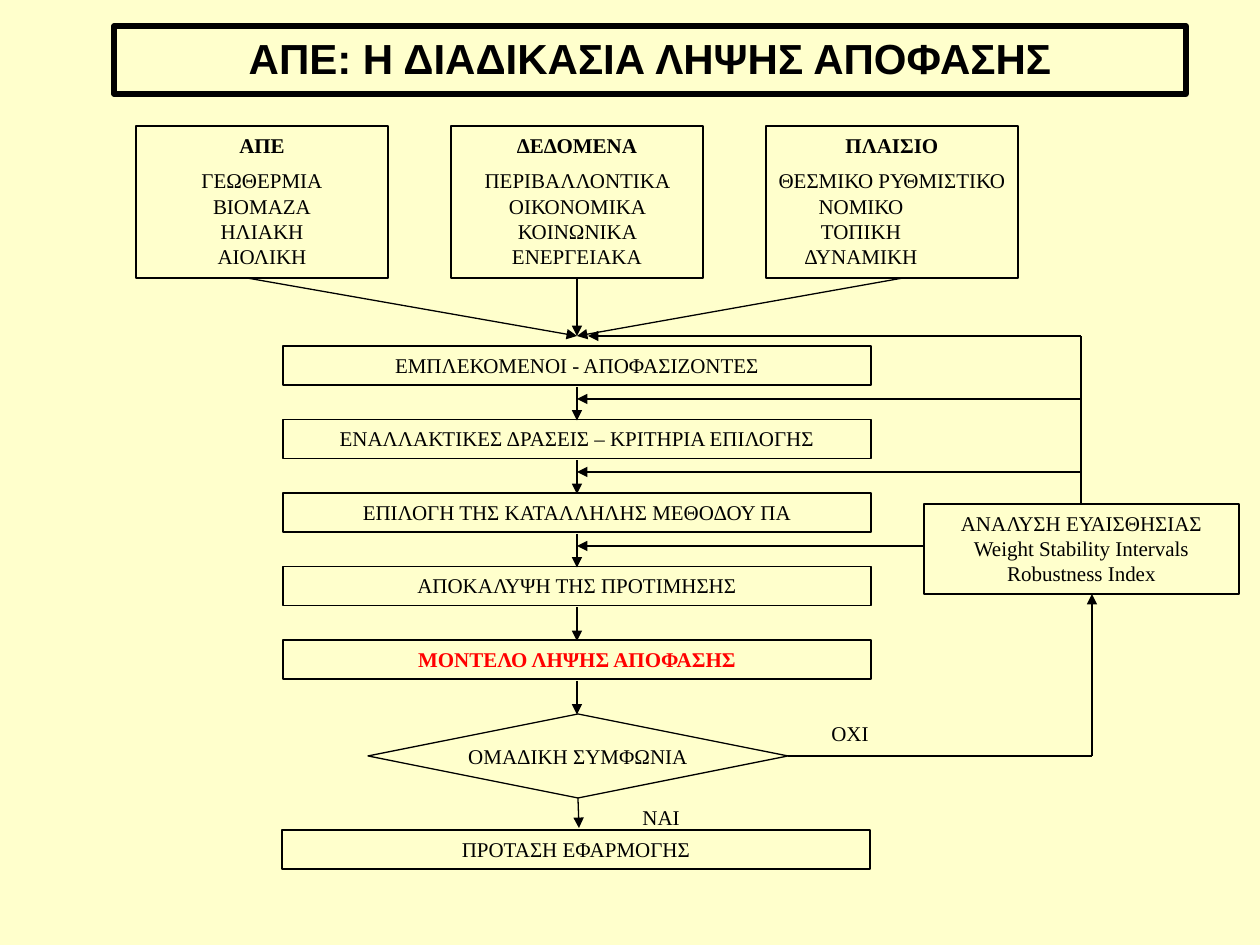
from lxml import etree
from pptx import Presentation
from pptx import util as u
from pptx.dml.color import RGBColor
from pptx.enum import shapes, text
from pptx.oxml import ns

SCALE = u.Inches(1) / 126
INK, RED, PAPER = "000000", "FF0000", "FFFFCC"

SOURCES = [
    ("ΑΠΕ", ["ΓΕΩΘΕΡΜΙΑ", "ΒΙΟΜΑΖΑ", "ΗΛΙΑΚΗ", "ΑΙΟΛΙΚΗ"]),
    ("ΔΕΔΟΜΕΝΑ", ["ΠΕΡΙΒΑΛΛΟΝΤΙΚΑ ΟΙΚΟΝΟΜΙΚΑ ΚΟΙΝΩΝΙΚΑ ΕΝΕΡΓΕΙΑΚΑ"]),
    ("ΠΛΑΙΣΙΟ", ["ΘΕΣΜΙΚΟ ΡΥΘΜΙΣΤΙΚΟ", "ΝΟΜΙΚΟ", "ΤΟΠΙΚΗ ΔΥΝΑΜΙΚΗ"]),
]
STEPS = [
    "ΕΜΠΛΕΚΟΜΕΝΟΙ - ΑΠΟΦΑΣΙΖΟΝΤΕΣ",
    "ΕΝΑΛΛΑΚΤΙΚΕΣ ΔΡΑΣΕΙΣ – ΚΡΙΤΗΡΙΑ ΕΠΙΛΟΓΗΣ",
    "ΕΠΙΛΟΓΗ ΤΗΣ ΚΑΤΑΛΛΗΛΗΣ ΜΕΘΟΔΟΥ ΠΑ",
    "ΑΠΟΚΑΛΥΨΗ ΤΗΣ ΠΡΟΤΙΜΗΣΗΣ",
    "ΜΟΝΤΕΛΟ ΛΗΨΗΣ ΑΠΟΦΑΣΗΣ",
]


def px(*lengths):
    return [u.Emu(round(length * SCALE)) for length in lengths]


def color(value):
    return RGBColor.from_string(value)


def apply(target, values):
    for name, value in values.items():
        setattr(target, name, value)


def write(shape, lines, align=text.PP_ALIGN.CENTER, size=12, **font):
    """Fill the shape with one paragraph per line and return the paragraphs."""
    frame = shape.text_frame
    apply(frame, {"word_wrap": True, "vertical_anchor": text.MSO_ANCHOR.TOP})
    frame.text = "\n".join(lines)
    values = {"name": "Times New Roman", "size": u.Pt(size), "bold": False, **font}
    for paragraph in frame.paragraphs:
        paragraph.alignment = align
        for run in paragraph.runs:
            apply(run.font, values)
            run.font.color.rgb = color(INK)
    return frame.paragraphs


def add_box(slide, box, lines, kind=shapes.MSO_SHAPE.RECTANGLE, width=0.75, **style):
    shape = slide.shapes.add_shape(kind, *px(*box))
    shape.shadow.inherit = False
    shape.fill.background()
    shape.line.color.rgb = color(INK)
    shape.line.width = u.Pt(width)
    write(shape, lines, **style)
    return shape


def add_label(slide, box, label):
    write(slide.shapes.add_textbox(*px(*box)), [label], text.PP_ALIGN.LEFT)


def add_line(slide, start, end, arrow=True):
    line = slide.shapes.add_connector(
        shapes.MSO_CONNECTOR.STRAIGHT, *px(*start, *end))
    line.line.color.rgb = color(INK)
    line.line.width = u.Pt(0.75)
    if arrow:
        etree.SubElement(line.line._get_or_add_ln(), ns.qn("a:tailEnd"), type="triangle")
    etree.SubElement(line._element.spPr, ns.qn("a:effectLst"))


def add_sources(slide, left, top, target):
    """Three input boxes whose arrows meet at the target point."""
    width, height, pitch = 252, 152, 315
    arrow_starts = (247, 577, 903)
    for index, (heading, items) in enumerate(SOURCES):
        shape = add_box(slide, (left + index * pitch, top, width, height),
                        [heading, *items])
        paragraphs = shape.text_frame.paragraphs
        paragraphs[0].runs[0].font.bold = True
        paragraphs[1].space_before = u.Pt(6)
        for paragraph in paragraphs:
            if paragraph.text == "ΝΟΜΙΚΟ":
                paragraph._p.get_or_add_pPr().set("marR", str(px(62)[0]))
        add_line(slide, (arrow_starts[index], top + height), target)


def add_steps(slide, left, top, width, height):
    """Stacked steps, each with an arrow down to the next part."""
    pitch = 73.5
    center = left + width // 2
    for index, label in enumerate(STEPS):
        row = top + index * pitch
        shape = add_box(slide, (left, row, width, height), [label])
        add_line(slide, (center, row + height + 2), (center, row + pitch + 1))
    font = shape.text_frame.paragraphs[0].runs[0].font
    font.bold = True
    font.color.rgb = color(RED)


def add_decision(slide, left, top, width, height):
    """Diamond with its yes and no exits and the final proposal."""
    center, middle, bottom = left + width // 2, top + height // 2, top + height
    right = left + width
    diamond = add_box(slide, (left, top, width, height), ["ΟΜΑΔΙΚΗ ΣΥΜΦΩΝΙΑ"],
                      shapes.MSO_SHAPE.DIAMOND)
    apply(diamond.text_frame, {"word_wrap": False,
                               "vertical_anchor": text.MSO_ANCHOR.MIDDLE})
    add_line(slide, (center, bottom), (center + 1, bottom + 30))
    add_label(slide, (center + 52, bottom, 84, 38), "ΝΑΙ")
    add_box(slide, (left - 86, bottom + 32, 588, 39), ["ΠΡΟΤΑΣΗ ΕΦΑΡΜΟΓΗΣ"])
    add_label(slide, (right + 31, top, 73, 38), "ΟΧΙ")
    add_line(slide, (right, middle), (right + 304, middle), arrow=False)
    add_line(slide, (right + 304, middle), (right + 304, 594))


def add_sensitivity(slide, left, top, width, height, target):
    """Sensitivity box with feedback arrows to the step column."""
    trunk = left + width // 2
    add_box(slide, (left, top, width, height),
            ["ΑΝΑΛΥΣΗ ΕΥΑΙΣΘΗΣΙΑΣ Weight Stability Intervals Robustness Index"])
    add_line(slide, (left, top + 42), (target, top + 42))
    add_line(slide, (trunk, top), (trunk, 336), arrow=False)
    for end, level in ((target + 11, 336), (target, 399), (target, 472)):
        add_line(slide, (trunk, level), (end, level))


def main():
    presentation = Presentation()
    apply(presentation, dict(zip(("slide_width", "slide_height"), px(1260, 945))))
    slide = presentation.slides.add_slide(presentation.slide_layouts[6])
    slide.background.fill.solid()
    slide.background.fill.fore_color.rgb = color(PAPER)
    add_sources(slide, 136, 126, target=(577, 336))
    add_steps(slide, 283, 346, 588, 39)
    add_decision(slide, 368, 714, 420, 84)
    add_sensitivity(slide, 924, 504, 315, 90, target=577)
    add_box(slide, (114, 26, 1072, 68), ["ΑΠΕ: Η ΔΙΑΔΙΚΑΣΙΑ ΛΗΨΗΣ ΑΠΟΦΑΣΗΣ"],
            width=3, size=24, name="Arial", bold=True)
    presentation.save("out.pptx")


if __name__ == "__main__":
    main()
